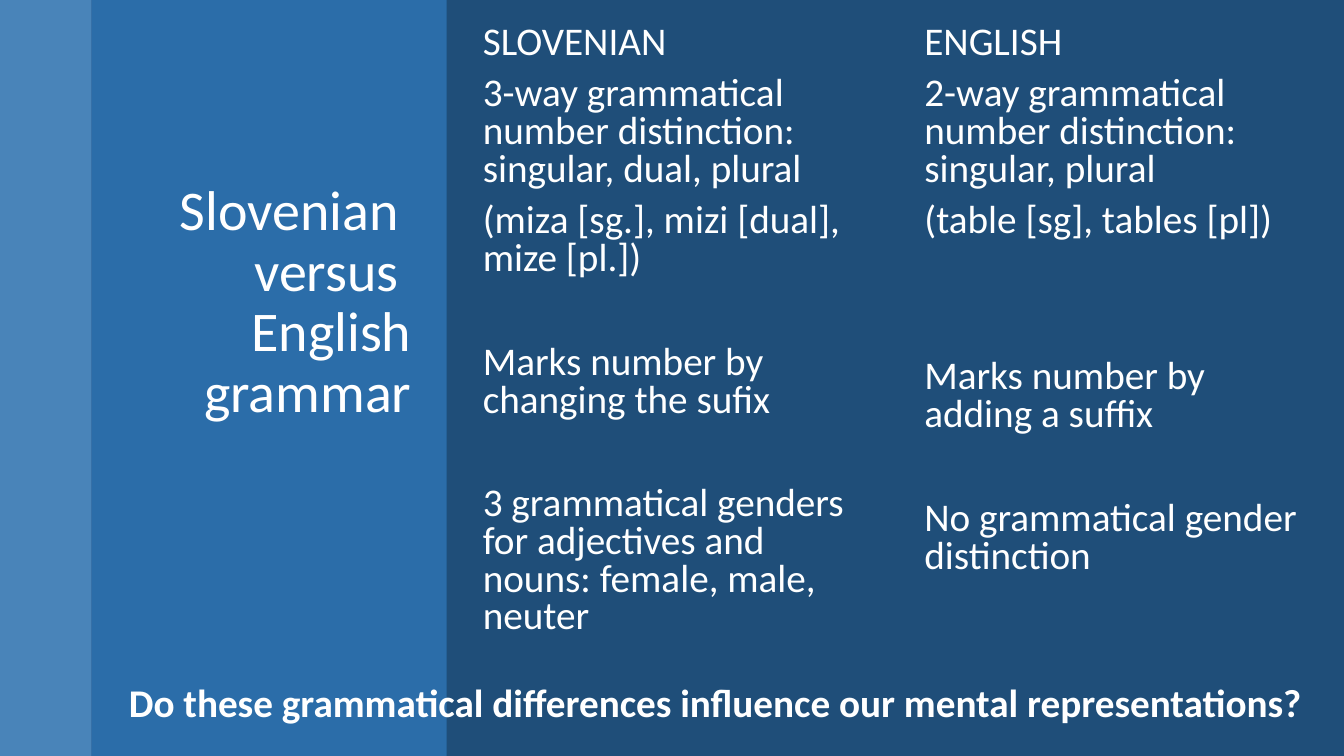
from copy import deepcopy

from lxml.etree import SubElement
from pptx import Presentation
from pptx.dml.color import RGBColor
from pptx.enum.shapes import MSO_SHAPE
from pptx.enum.text import MSO_ANCHOR, PP_ALIGN
from pptx.oxml.ns import qn
from pptx.util import Inches, Pt

WHITE = "FFFFFF"
LINE_SPACING = 0.8
PARAGRAPH_GAP = 10
EMPTY_ROW = 37.3

SLOVENIAN = [
    ("SLOVENIAN", 0),
    ("3-way grammatical number distinction: singular, dual, plural", 0),
    ("(miza [sg.], mizi [dual], mize [pl.])", 0),
    ("Marks number by changing the sufix", 1),
    ("3 grammatical genders for adjectives and nouns: female, male, neuter", 1),
]
ENGLISH = [
    ("ENGLISH", 0),
    ("2-way grammatical number distinction: singular, plural", 0),
    ("(table [sg], tables [pl])", 0),
    ("Marks number by adding a suffix", 2),
    ("No grammatical gender distinction", 1),
]


def paint(fill, color):
    fill.solid()
    fill.fore_color.rgb = RGBColor.from_string(color)


def write(paragraph, text, size=28, bold=False, align=PP_ALIGN.LEFT, spacing=1.0, before=0):
    paragraph.text = text
    paragraph.alignment = align
    paragraph.line_spacing = spacing
    paragraph.space_before = Pt(before)
    for run in paragraph.runs:
        run.font.name = "Calibri"
        run.font.size = Pt(size)
        run.font.bold = bold
        paint(run.font.fill, WHITE)
    for line_break in paragraph._p.findall(qn("a:br")):
        line_break.append(deepcopy(paragraph.runs[0].font._element))


def text_area(slide, box):
    frame = slide.shapes.add_textbox(*map(Inches, box)).text_frame
    frame.word_wrap = True
    return frame


def add_band(slide, box, color, opacity):
    band = slide.shapes.add_shape(MSO_SHAPE.RECTANGLE, *map(Inches, box))
    band.shadow.inherit = False
    band.line.fill.background()
    paint(band.fill, color)
    tint = band.fill._xPr.find(qn("a:solidFill"))[0]
    SubElement(tint, qn("a:alpha"), val=str(opacity * 1000))


def add_title(slide, box, text):
    title = slide.shapes.title
    slide.shapes._spTree.append(title._element)
    title.left, title.top, title.width, title.height = map(Inches, box)
    frame = title.text_frame
    frame.word_wrap = True
    frame.vertical_anchor = MSO_ANCHOR.TOP
    write(frame.paragraphs[0], text, size=40, align=PP_ALIGN.RIGHT, spacing=0.9)


def add_language(slide, box, features):
    frame = text_area(slide, box)
    for index, (feature, rows_above) in enumerate(features):
        paragraph = frame.add_paragraph() if index else frame.paragraphs[0]
        write(paragraph, feature, spacing=LINE_SPACING,
              before=PARAGRAPH_GAP + rows_above * EMPTY_ROW)


def add_question(slide, box, text):
    write(text_area(slide, box).paragraphs[0], text, bold=True)


def main():
    deck = Presentation()
    deck.slide_width, deck.slide_height = Inches(13.33), Inches(7.5)
    slide = deck.slides.add_slide(deck.slide_layouts[5])
    paint(slide.background.fill, "1F4E79")
    add_band(slide, (0, 0, 0.91, 7.5), "5B9BD5", 70)
    add_band(slide, (0.91, 0, 3.52, 7.5), "2E75B6", 80)
    add_title(slide, (1.09, 1.76, 3.09, 4.92), "Slovenian \vversus \vEnglish grammar")
    add_language(slide, (4.69, 0.2, 4.11, 6.44), SLOVENIAN)
    add_language(slide, (9.07, 0.2, 3.93, 6.23), ENGLISH)
    add_question(slide, (1.18, 6.68, 12.15, 0.57),
                 "Do these grammatical differences influence our mental representations?")
    deck.save("out.pptx")


if __name__ == "__main__":
    main()
